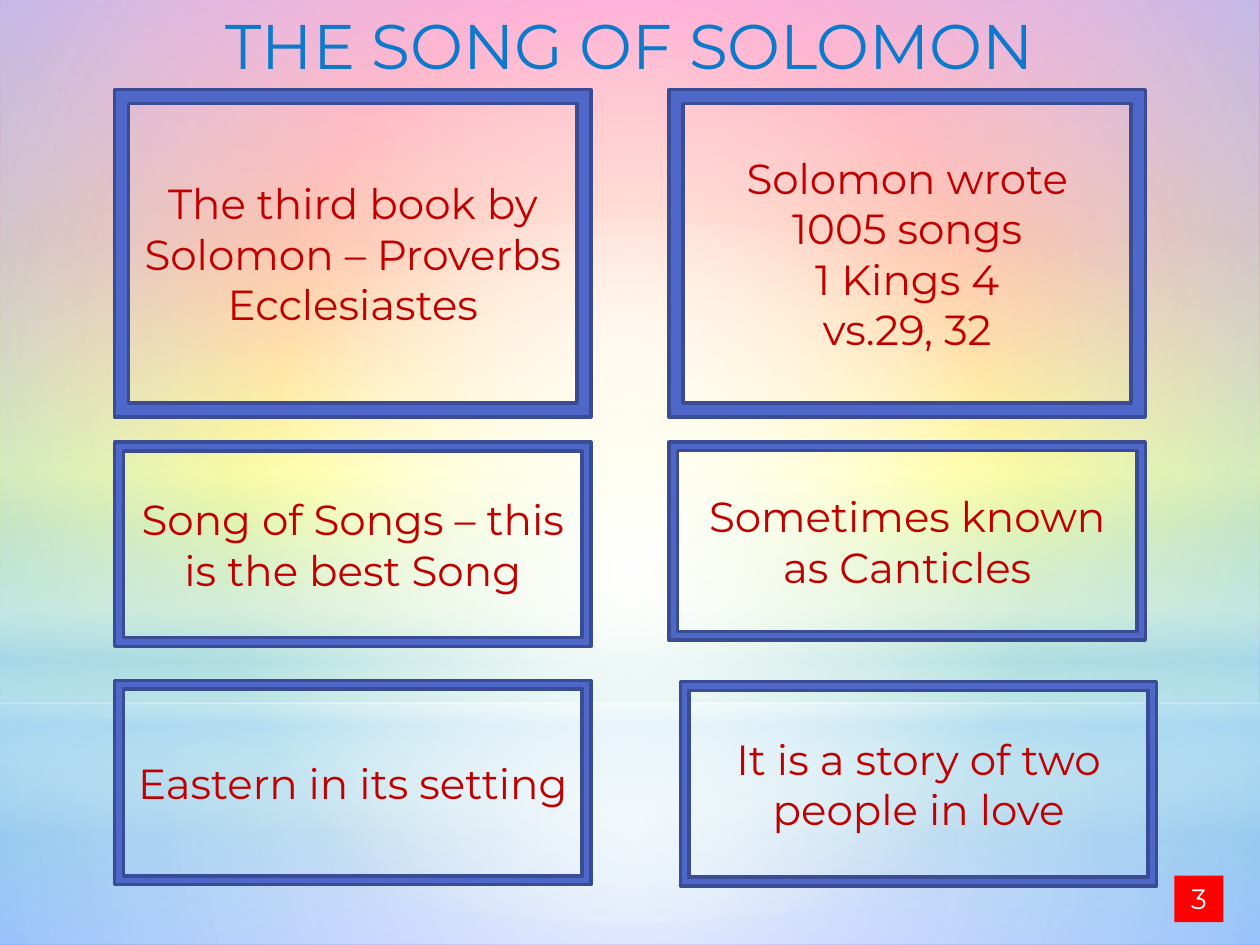
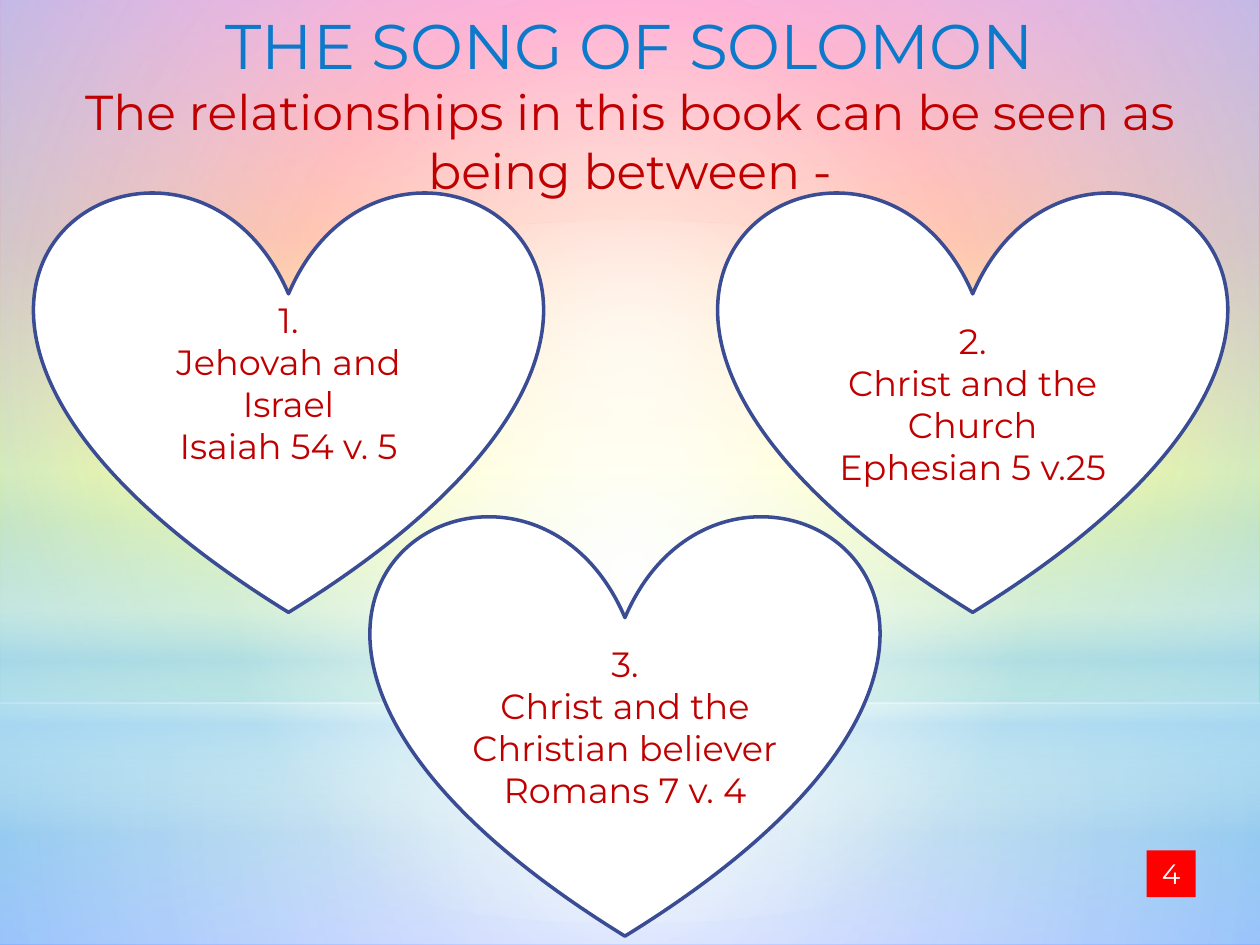
from lxml.etree import SubElement
from pptx import Presentation
from pptx.dml.color import RGBColor
from pptx.enum.shapes import MSO_SHAPE
from pptx.enum.text import MSO_ANCHOR, MSO_AUTO_SIZE, PP_ALIGN
from pptx.oxml.ns import qn
from pptx.util import Inches, Pt

FONT = "Montserrat"
TITLE = "THE SONG OF SOLOMON"
TITLE_BLUE = RGBColor(0x0D, 0x79, 0xCA)
TEXT_RED = RGBColor(0xC0, 0x00, 0x00)
FRAME_BLUE = RGBColor(0x4E, 0x67, 0xC8)
OUTLINE_BLUE = RGBColor(0x3A, 0x4C, 0x94)
BADGE_RED = RGBColor(0xFF, 0x00, 0x00)
WHITE = RGBColor(0xFF, 0xFF, 0xFF)
PALE_BLUE = RGBColor(0xB4, 0xDC, 0xFA)
RAINBOW = [
    (0, RGBColor(0xFF, 0x33, 0x99), 100),
    (25, RGBColor(0xFF, 0x66, 0x33), 100),
    (50, RGBColor(0xFF, 0xFF, 0x00), 100),
    (75, RGBColor(0x01, 0xA7, 0x8F), 100),
    (100, RGBColor(0x33, 0x66, 0xFF), 100),
]

# Backdrop layers: shape, box, gradient stops (position, colour, opacity), radial
BACKDROP = [
    (MSO_SHAPE.RECTANGLE, (0, 5.58, 10, 1.92),
     [(0, WHITE, 91), (37, WHITE, 76), (100, PALE_BLUE, 79)], True),
    (MSO_SHAPE.RECTANGLE, (0, 0, 10, 5.58),
     [(0, WHITE, 89), (48, WHITE, 62), (100, PALE_BLUE, 79)], True),
    (MSO_SHAPE.RECTANGLE, (0, 4.12, 10, 2.5),
     [(0, WHITE, 0), (29, WHITE, 30), (45, PALE_BLUE, 40),
      (55, WHITE, 26), (65, PALE_BLUE, 60), (100, WHITE, 0)], False),
    (MSO_SHAPE.OVAL, (0, 1.75, 10, 5.58),
     [(0, WHITE, 100), (56, WHITE, 0)], True),
]

FRAME_SIZE = (3.78, 1.62)
FRAMES = [
    ((0.91, 0.71, 3.78, 2.6),
     ["The third book by Solomon – Proverbs", "Ecclesiastes"]),
    ((5.31, 0.71, 3.78, 2.6),
     ["Solomon wrote 1005 songs", "1 Kings 4", "vs.29, 32"]),
    ((0.91, 3.51, *FRAME_SIZE), ["Song of Songs – this is the best Song"]),
    ((5.31, 3.51, 3.78, 1.57), ["Sometimes known as Canticles"]),
    ((0.91, 5.4, *FRAME_SIZE), ["Eastern in its setting"]),
    ((5.4, 5.41, *FRAME_SIZE), ["It is a story of two people in love"]),
]

HEART_SIZE = (4.02, 3.37)
LOWERED_TEXT = 0.38  # top inset that moves the text down by half a line
HEARTS = [
    ((0.28, 1.49), 0.05, ["1.", "Jehovah and Israel", "Isaiah 54 v. 5"]),
    ((5.71, 1.49), LOWERED_TEXT,
     ["2.", "Christ and the Church", "Ephesian 5 v.25"]),
    ((2.95, 4.06), LOWERED_TEXT,
     ["3.", "Christ and the Christian believer", "Romans 7 v. 4"]),
]


def set_gradient(properties, stops, radial=False):
    """Replace the solid fill in properties by a radial or top-down gradient."""
    gradient = properties.makeelement(qn("a:gradFill"), {"rotWithShape": "1"})
    stop_list = SubElement(gradient, qn("a:gsLst"))
    for position, colour, opacity in stops:
        stop = SubElement(stop_list, qn("a:gs"), pos=str(position * 1000))
        colour_element = SubElement(stop, qn("a:srgbClr"), val=str(colour))
        SubElement(colour_element, qn("a:alpha"), val=str(opacity * 1000))
    if radial:
        circle = SubElement(gradient, qn("a:path"), path="circle")
        SubElement(circle, qn("a:fillToRect"),
                   {side: "50000" for side in "ltrb"})
    else:
        SubElement(gradient, qn("a:lin"), ang="5400000", scaled="0")
    properties.replace(properties.find(qn("a:solidFill")), gradient)


def write_text(shape, lines, size, colour, anchor=MSO_ANCHOR.TOP):
    text_frame = shape.text_frame
    text_frame.word_wrap = True
    text_frame.auto_size = MSO_AUTO_SIZE.NONE
    text_frame.vertical_anchor = anchor
    text_frame.text = "\n".join(lines)
    for paragraph in text_frame.paragraphs:
        paragraph.alignment = PP_ALIGN.CENTER
        for run in paragraph.runs:
            run.font.name = FONT
            run.font.size = Pt(size)
            run.font.color.rgb = colour


def add_filled_shape(slide, kind, box, fill, outline=None):
    shape = slide.shapes.add_shape(kind, *map(Inches, box))
    shape.shadow.inherit = False
    shape.fill.solid()
    shape.fill.fore_color.rgb = fill
    if outline is None:
        shape.line.fill.background()
    else:
        shape.line.color.rgb = outline
        shape.line.width = Pt(2)
    return shape


def build_backdrop(layout, slide):
    """Draw the backdrop layers on the slide and move them into its layout."""
    layout.background.fill.solid()
    layout.background.fill.fore_color.rgb = WHITE
    set_gradient(layout.element.find(".//" + qn("p:bgPr")), RAINBOW)
    for kind, box, stops, radial in BACKDROP:
        layer = add_filled_shape(slide, kind, box, WHITE)
        set_gradient(layer.element.spPr, stops, radial)
        layout.shapes.element.append(layer.element)


def add_title(slide):
    title = slide.shapes.title
    title.left, title.top, title.width, title.height = map(
        Inches, (0, 0, 10, 0.71))
    write_text(title, [TITLE], 36, TITLE_BLUE)


def add_page_badge(slide, left, top, number):
    badge = add_filled_shape(slide, MSO_SHAPE.RECTANGLE,
                             (left, top, 0.39, 0.37), BADGE_RED)
    write_text(badge, [str(number)], 16, WHITE)


def add_frame(slide, box, lines):
    frame = add_filled_shape(slide, MSO_SHAPE.FRAME, box,
                             FRAME_BLUE, OUTLINE_BLUE)
    frame.adjustments[0] = 0.043
    write_text(frame, lines, 24, TEXT_RED, MSO_ANCHOR.MIDDLE)


def add_heart(slide, position, top_inset, lines):
    heart = add_filled_shape(slide, MSO_SHAPE.HEART, (*position, *HEART_SIZE),
                             WHITE, OUTLINE_BLUE)
    write_text(heart, lines, 20, TEXT_RED, MSO_ANCHOR.MIDDLE)
    heart.text_frame.margin_top = Inches(top_inset)


def build_facts_slide(slide):
    add_title(slide)
    for box, lines in FRAMES:
        add_frame(slide, box, lines)
    add_page_badge(slide, 9.32, 6.95, 3)


def build_relationships_slide(slide):
    add_title(slide)
    for position, top_inset, lines in HEARTS:
        add_heart(slide, position, top_inset, lines)
    subtitle = slide.shapes.add_textbox(*map(Inches, (0, 0.6, 10, 1.04)))
    write_text(subtitle,
               ["The relationships in this book can be seen as being between -"],
               28, TEXT_RED)
    add_page_badge(slide, 9.1, 6.75, 4)


def main():
    presentation = Presentation()
    presentation.slide_width = Inches(10)
    presentation.slide_height = Inches(7.5)
    layout = presentation.slide_layouts.get_by_name("Title Only")
    facts_slide = presentation.slides.add_slide(layout)
    build_backdrop(layout, facts_slide)
    build_facts_slide(facts_slide)
    build_relationships_slide(presentation.slides.add_slide(layout))
    presentation.save("out.pptx")


if __name__ == "__main__":
    main()
